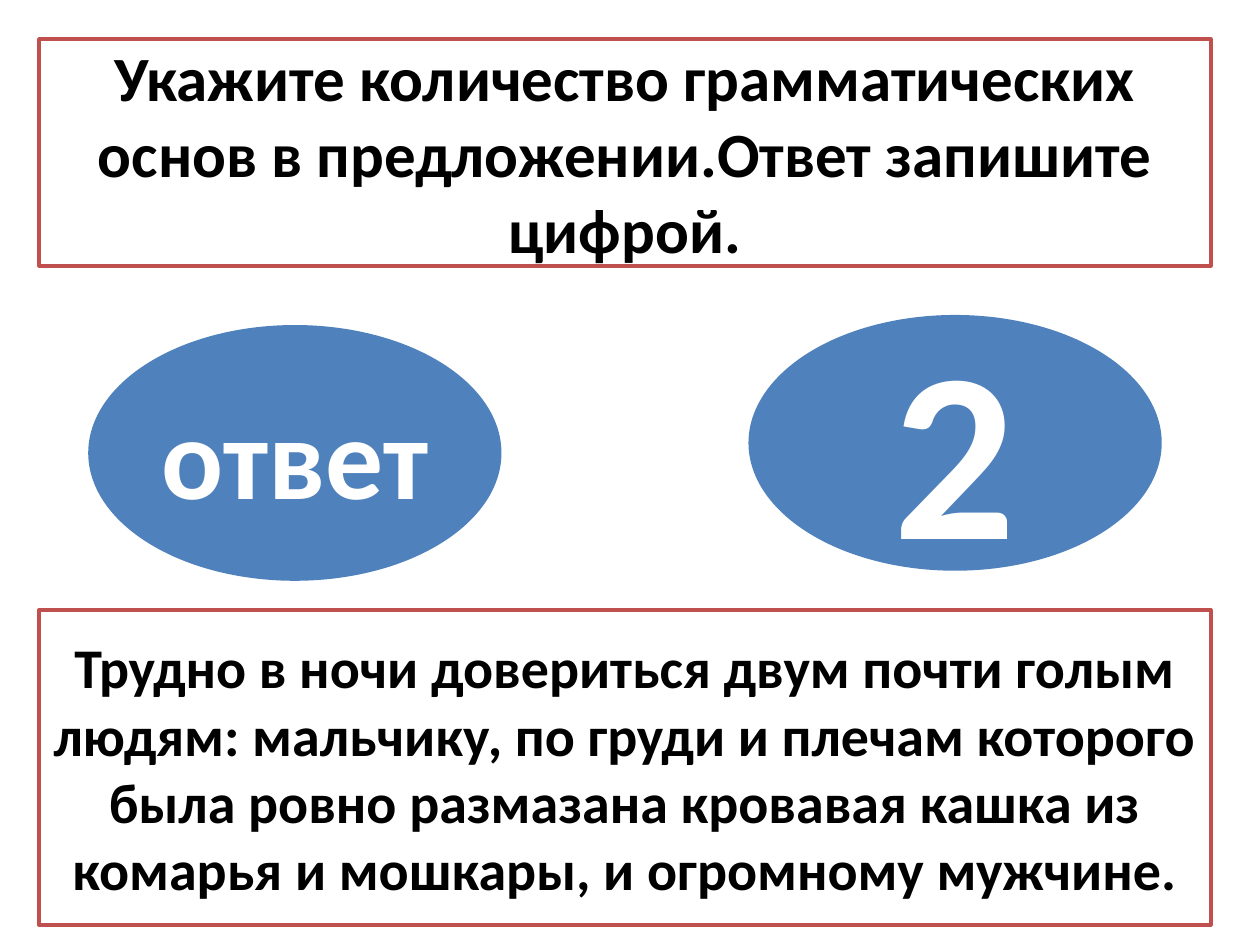
from pptx import Presentation
from pptx import util as u
from pptx.dml.color import RGBColor
from pptx.enum import shapes, text

WIDE, HIGH = 10, 7.5
HUES = {"paper": "FFFFFF", "ink": "000000", "frame": "C0504D", "oval": "4F81BD"}
EDGE, SPAN = 0.31, 9.3
OVAL = (3.28, 2.03)
TASK = "Укажите количество грамматических основ в предложении.Ответ запишите цифрой."
QUOTE = (
    "Трудно в ночи довериться двум почти голым людям: мальчику, по груди и плечам "
    "которого была ровно размазана кровавая кашка из комарья и мошкары, "
    "и огромному мужчине."
)


def hue(name):
    return RGBColor.from_string(HUES[name])


def put(item, values):
    for name, value in values.items():
        setattr(item, name, value)


def shape(slide, kind, box, words, size, fill, ink):
    item = slide.shapes.add_shape(kind, *map(u.Inches, box))
    item.shadow.inherit = False
    item.fill.solid()
    item.fill.fore_color.rgb = hue(fill)
    frame = item.text_frame
    put(frame, {"word_wrap": True, "vertical_anchor": text.MSO_ANCHOR.MIDDLE})
    para = frame.paragraphs[0]
    para.alignment = text.PP_ALIGN.CENTER
    run = para.add_run()
    run.text = words
    put(run.font, {"name": "Calibri", "size": u.Pt(size), "bold": True})
    run.font.color.rgb = hue(ink)
    return item


def panel(slide, top, tall, words, size):
    box = (EDGE, top, SPAN, tall)
    item = shape(slide, shapes.MSO_SHAPE.RECTANGLE, box, words, size, "paper", "ink")
    item.line.color.rgb = hue("frame")
    item.line.width = u.Pt(2)


def oval(slide, left, top, words, size):
    box = (left, top, *OVAL)
    item = shape(slide, shapes.MSO_SHAPE.OVAL, box, words, size, "oval", "paper")
    item.line.fill.background()


def main():
    deck = Presentation()
    put(deck, {"slide_width": u.Inches(WIDE), "slide_height": u.Inches(HIGH)})
    slide = deck.slides.add_slide(deck.slide_layouts[6])
    panel(slide, EDGE, 1.8, TASK, 36)
    oval(slide, 0.7, 2.58, "ответ", 66)
    oval(slide, 5.94, 2.5, "2", 138)
    panel(slide, 4.84, 2.5, QUOTE, 32)
    deck.save("out.pptx")


if __name__ == "__main__":
    main()
